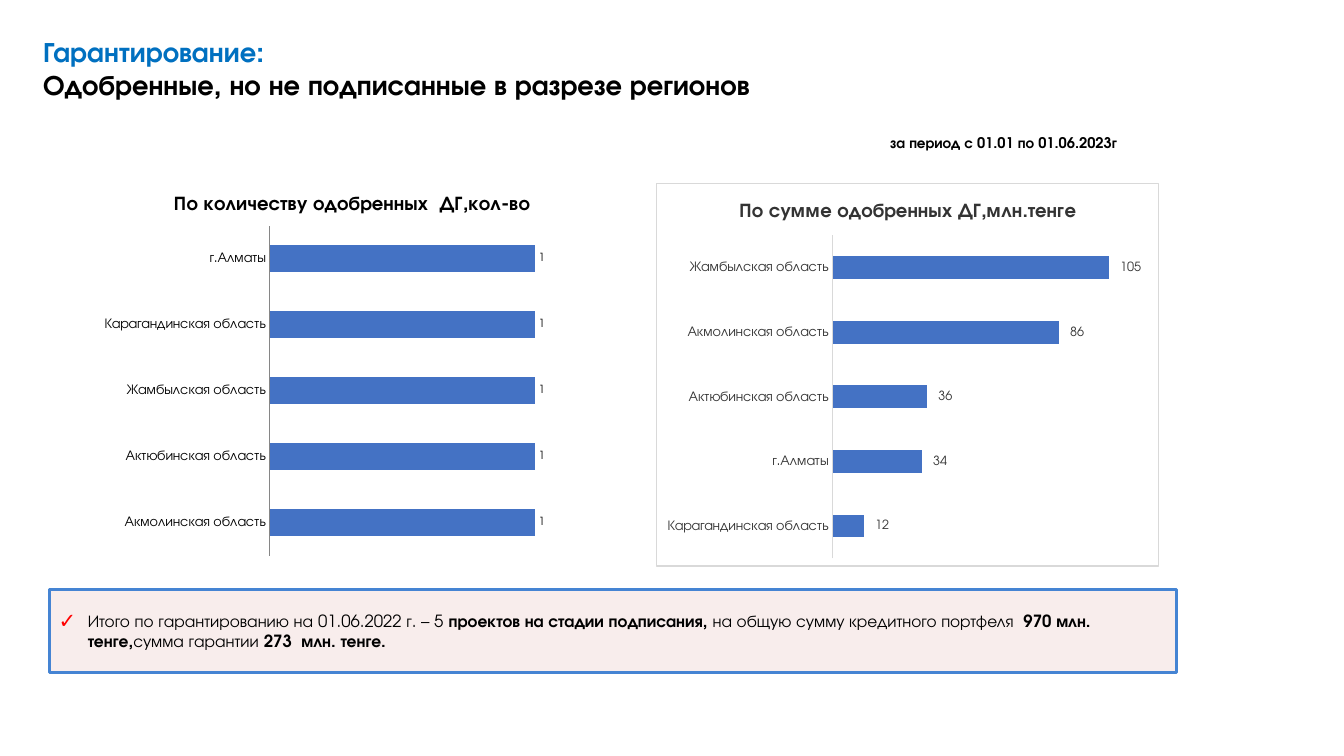
from lxml.etree import SubElement
from pptx import Presentation
from pptx.chart.data import CategoryChartData as ChartData
from pptx.dml.color import RGBColor as RGB
from pptx.enum.chart import XL_CHART_TYPE as CT, XL_LABEL_POSITION as LP, XL_TICK_MARK as TM
from pptx.enum.shapes import MSO_SHAPE as SHAPE
from pptx.enum.text import MSO_ANCHOR as ANCHOR, PP_ALIGN as ALIGN
from pptx.oxml import parse_xml
from pptx.oxml.ns import nsdecls, qn
from pptx.util import Inches, Pt

BLACK = RGB(0x00, 0x00, 0x00)
DARK = RGB(0x33, 0x33, 0x33)
GREY = RGB(0x86, 0x86, 0x86)
PALE = RGB(0xD9, 0xD9, 0xD9)
WHITE = RGB(0xFF, 0xFF, 0xFF)
BLUE = RGB(0x00, 0x70, 0xC0)
BAR = RGB(0x44, 0x72, 0xC4)
FRAME = RGB(0x45, 0x84, 0xD3)
PINK = RGB(0xF2, 0xDC, 0xDB)
RED = RGB(0xFF, 0x00, 0x00)
SUM_FORMAT = r"_-* #\ ##0_р_._-"


def put(obj, **values):
    for name, value in values.items():
        setattr(obj, name, value)


class Deck:
    font = "TeX Gyre Adventor"

    def __init__(self, width, height):
        self.prs = Presentation()
        put(self.prs, slide_width=Inches(width), slide_height=Inches(height))
        self.s = self.prs.slides.add_slide(self.prs.slide_layouts[6])

    def box(self, *shares):
        sides = (self.prs.slide_width, self.prs.slide_height) * 2
        return [round(side * share / 100) for side, share in zip(sides, shares)]

    def style(self, font, size, color=BLACK, bold=False):
        put(font, name=self.font, size=Pt(size), bold=bold)
        font.color.rgb = color

    def run(self, p, text, size, color=BLACK, bold=False):
        r = p.add_run()
        r.text = text
        self.style(r.font, size, color, bold)

    def text(self, at, lines, size, wrap=True):
        tf = self.s.shapes.add_textbox(*self.box(*at)).text_frame
        tf.word_wrap = wrap
        p = tf.paragraphs[0]
        for i, (text, color) in enumerate(lines):
            if i:
                p.add_line_break()
            self.run(p, text, size, color, True)

    def note(self, at, parts, size):
        sp = self.s.shapes.add_shape(SHAPE.RECTANGLE, *self.box(*at))
        sp.shadow.inherit = False
        sp.fill.solid()
        sp.fill.fore_color.rgb = PINK
        color = sp.fill._xPr.find(".//" + qn("a:srgbClr"))
        SubElement(color, qn("a:alpha"), val="50000")
        sp.line.color.rgb = FRAME
        sp.line.width = Pt(2)
        tf = sp.text_frame
        put(tf, word_wrap=True, vertical_anchor=ANCHOR.MIDDLE,
            margin_left=Inches(0.08), margin_right=Inches(0.08),
            margin_top=Inches(0.04), margin_bottom=Inches(0.04))
        p = tf.paragraphs[0]
        put(p, alignment=ALIGN.LEFT, space_after=Pt(6))
        self.bullet(p, "✓", RED)
        for i, text in enumerate(parts):
            self.run(p, text, size, bold=i % 2 == 1)

    def bullet(self, p, char, color):
        pPr = p._p.get_or_add_pPr()
        pPr.set("marL", str(Inches(0.3)))
        pPr.set("indent", str(Inches(-0.29)))
        SubElement(SubElement(pPr, qn("a:buClr")), qn("a:srgbClr"), val=str(color))
        SubElement(pPr, qn("a:buSzPct"), val="125000")
        SubElement(pPr, qn("a:buFont"), typeface="Wingdings 2" if char == "" else "DejaVu Sans")
        SubElement(pPr, qn("a:buChar"), char=char)

    def bars(self, at, title, values, plot, top, gap, color, axis_color,
             label_size, number_format="General", framed=False):
        data = ChartData()
        data.categories = list(values)
        data.add_series("Series 1", list(values.values()))
        chart = self.s.shapes.add_chart(CT.BAR_CLUSTERED, *self.box(*at), data).chart
        put(chart, has_legend=False, has_title=True)
        self.style(chart.font, 10, color)
        p = chart.chart_title.text_frame.paragraphs[0]
        self.run(p, title, 14, color, True)
        chart.chart_title.include_in_layout = False

        axis = chart.category_axis
        put(axis, major_tick_mark=TM.NONE, minor_tick_mark=TM.NONE, has_major_gridlines=False)
        self.style(axis.tick_labels.font, 10, color)
        axis.format.line.color.rgb = axis_color
        axis.format.line.width = Pt(0.75)
        put(chart.value_axis, visible=False, has_major_gridlines=False,
            minimum_scale=0, maximum_scale=top)

        group = chart.plots[0]
        put(group, gap_width=gap, vary_by_categories=False, has_data_labels=True)
        put(group.data_labels, show_value=True, position=LP.OUTSIDE_END,
            number_format=number_format, number_format_is_linked=False)
        self.style(group.data_labels.font, label_size, color)
        fill = group.series[0].format.fill
        fill.solid()
        fill.fore_color.rgb = BAR
        self.place_plot(chart, plot)
        self.frame(chart, framed)

    def place_plot(self, chart, plot):
        area = chart.element.find(".//" + qn("c:plotArea"))
        for old in area.findall(qn("c:layout")):
            area.remove(old)
        layout = parse_xml(f"<c:layout {nsdecls('c')}><c:manualLayout/></c:layout>")
        modes = (("layoutTarget", "inner"), ("xMode", "edge"), ("yMode", "edge"))
        for name, value in (*modes, *zip("xywh", plot)):
            SubElement(layout[0], qn("c:" + name), val=str(value))
        area.insert(0, layout)

    def frame(self, chart, framed):
        solid = '<a:solidFill><a:srgbClr val="{}"/></a:solidFill>'
        fill, line = (solid.format(c) if framed else "<a:noFill/>" for c in (WHITE, PALE))
        chart.element.find(qn("c:chart")).addnext(parse_xml(
            f'<c:spPr {nsdecls("c", "a")}>{fill}<a:ln w="{Pt(0.75)}">{line}</a:ln></c:spPr>'))


def main():
    deck = Deck(13.33, 7.5)
    deck.text((2.48, 3.87, 59.04, 14.8),
              [("Гарантирование:", BLUE),
               ("Одобренные, но не подписанные в разрезе регионов", BLACK)], 20)
    deck.text((65.49, 17.07, 19.35, 3.73),
              [("за период с 01.01 по 01.06.2023г", BLACK)], 10.5, wrap=False)
    deck.note((3.68, 78, 83.87, 10.93),
              ["Итого по гарантированию на 01.06.2022 г. – 5",
               " проектов на стадии подписания, ",
               "на общую сумму кредитного портфеля  ",
               "970 млн. тенге,", "сумма гарантии", " 273  млн. тенге."], 12)
    regions = ["Акмолинская область", "Актюбинская область", "Жамбылская область",
               "Карагандинская область", "г.Алматы"]
    deck.bars((7.05, 23.33, 38.33, 52.27), "По количеству одобренных  ДГ,кол-во",
              dict.fromkeys(regions, 1), (0.34, 0.125, 0.617, 0.835),
              1.2, 150, BLACK, GREY, 8)
    sums = dict(zip(regions, (86, 36, 105, 12, 34)))
    deck.bars((48.84, 24.27, 37.43, 50.67), "По сумме одобренных ДГ,млн.тенге",
              dict(sorted(sums.items(), key=lambda item: item[1])),
              (0.35, 0.135, 0.63, 0.845), 120, 182, DARK, PALE, 9,
              SUM_FORMAT, framed=True)
    deck.prs.save("out.pptx")


if __name__ == "__main__":
    main()
